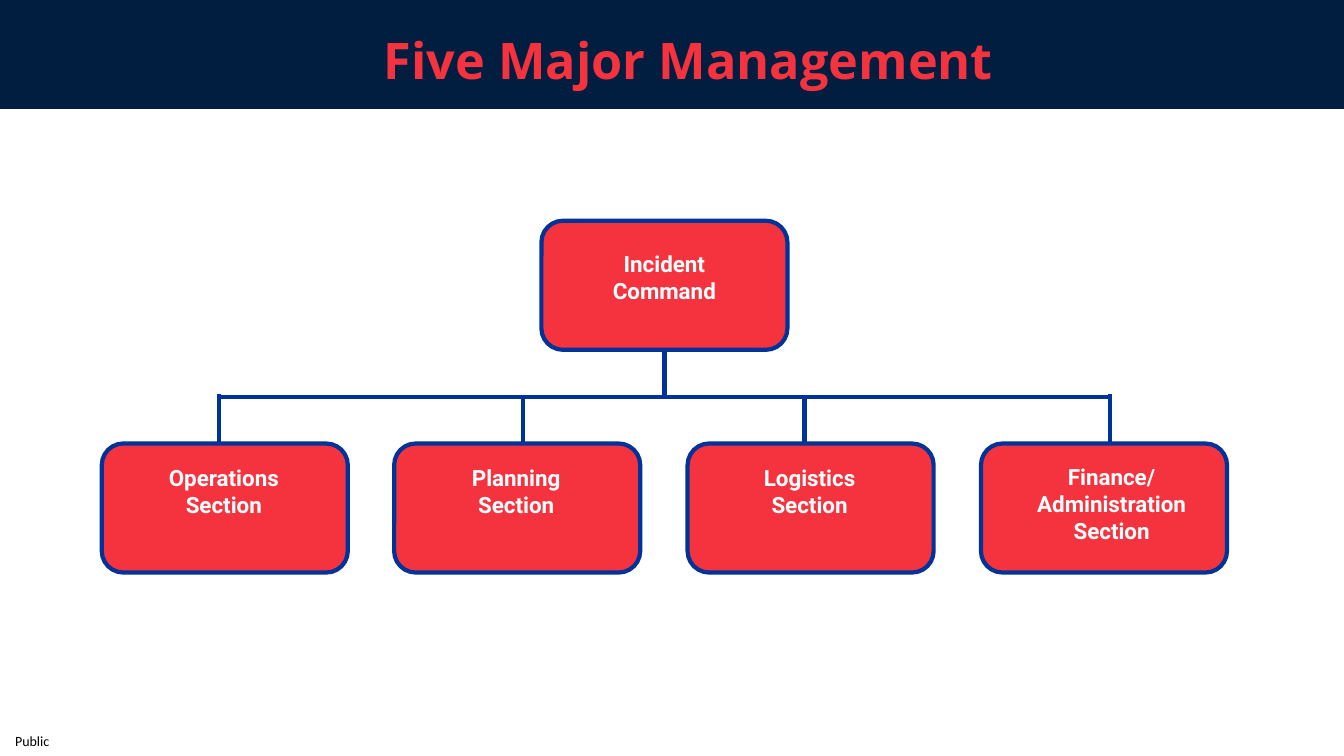
from dataclasses import dataclass

from lxml import etree
from pptx import Presentation
from pptx.dml.color import RGBColor
from pptx.enum.shapes import MSO_CONNECTOR, MSO_SHAPE
from pptx.enum.text import MSO_ANCHOR, MSO_AUTO_SIZE, PP_ALIGN
from pptx.oxml.ns import qn
from pptx.util import Emu, Pt

RECT, ROUND_RECT = MSO_SHAPE.RECTANGLE, MSO_SHAPE.ROUNDED_RECTANGLE
STRAIGHT = MSO_CONNECTOR.STRAIGHT
TOP, MIDDLE = MSO_ANCHOR.TOP, MSO_ANCHOR.MIDDLE
LEFT, CENTER = PP_ALIGN.LEFT, PP_ALIGN.CENTER
NO_FIT = MSO_AUTO_SIZE.NONE

EMU_PER_PX = 9144  # 100 px to the inch
NAVY, RED, BLUE, WHITE, BLACK = "011E41", "F5333F", "003399", "FFFFFF", "000000"
BOX_W, BOX_H = 244, 128
SECTION_TOP, BUS_Y, DROP = 440, 394, 58


@dataclass(frozen=True)
class Box:
    text: str
    left: int
    top: int
    label_dx: int
    label_dy: int
    label_w: int
    label_h: int


@dataclass(frozen=True)
class Line:
    x1: int
    y1: int
    x2: int
    y2: int


def section_left(i: int) -> int:
    """Spread four sections evenly between 101 and 973 px."""
    return 101 + 872 * i // 3


BOXES = [
    Box("Operations Section", section_left(0), SECTION_TOP, 20, 16, 202, 64),
    Box("Planning Section", section_left(1), SECTION_TOP, 28, 16, 186, 64),
    Box("Logistics Section", section_left(2), SECTION_TOP, 28, 16, 186, 64),
    Box("Finance/ Administration Section", section_left(3), SECTION_TOP, 19, 15, 221, 91),
    Box("Incident Command", 537, 219, 29, 24, 186, 64),
]
DROPS = [Line(x, y, x, y + DROP) for x, y in
         [(1101, 391), (798, BUS_Y), (659, BUS_Y - DROP), (519, BUS_Y), (217, 391)]]
BUS = Line(217, BUS_Y, 1101, BUS_Y)


def px(n: int) -> Emu:
    return Emu(n * EMU_PER_PX)


def color(hex_value: str) -> RGBColor:
    return RGBColor.from_string(hex_value)


def add_box(shapes, kind, left: int, top: int, width: int, height: int,
            fill: str, line: str = ""):
    sp = shapes.add_shape(kind, px(left), px(top), px(width), px(height))
    sp.shadow.inherit = False
    sp.fill.solid()
    sp.fill.fore_color.rgb = color(fill)
    if line:
        sp.line.color.rgb = color(line)
        sp.line.width = Pt(3)
    else:
        sp.line.fill.background()
    return sp


def add_line(shapes, line: Line) -> None:
    cxn = shapes.add_connector(STRAIGHT, px(line.x1), px(line.y1), px(line.x2), px(line.y2))
    cxn.line.color.rgb = color(BLUE)
    cxn.line.width = Pt(3)
    etree.SubElement(cxn.element.spPr, qn("a:effectLst"))


def write(sp, text: str, font: str, size: int, hex_value: str,
          bold: bool, align, anchor) -> None:
    tf = sp.text_frame
    tf.word_wrap = True
    tf.auto_size = NO_FIT
    tf.vertical_anchor = anchor
    p = tf.paragraphs[0]
    p.alignment = align
    r = p.add_run()
    r.text = text
    r.font.name = font
    r.font.size = Pt(size)
    r.font.bold = bold
    r.font.color.rgb = color(hex_value)


def add_org_box(shapes, box: Box) -> None:
    add_box(shapes, ROUND_RECT, box.left, box.top, BOX_W, BOX_H, RED, BLUE)
    label = add_box(shapes, RECT, box.left + box.label_dx, box.top + box.label_dy,
                    box.label_w, box.label_h, RED)
    write(label, box.text, "Roboto", 16, WHITE, True, CENTER, TOP)


def main() -> None:
    prs = Presentation()
    prs.slide_width, prs.slide_height = px(1333), px(750)
    s = prs.slides.add_slide(prs.slide_layouts[5])

    # Classification mark
    mark = s.shapes.add_textbox(px(0), px(721), px(64), px(29))
    tf = mark.text_frame
    tf.margin_left = px(15)
    tf.margin_top = tf.margin_right = tf.margin_bottom = 0
    write(mark, "Public", "Calibri", 10, BLACK, False, LEFT, MIDDLE)

    # Header band with the title in front of it
    add_box(s.shapes, RECT, -2, -1, 1335, 109, NAVY)
    title = s.shapes.title
    title.left, title.top, title.width, title.height = px(73), px(20), px(1220), px(78)
    write(title, "Five Major Management", "Open Sans", 36, RED, True, CENTER, MIDDLE)
    s.shapes.element.append(title.element)

    # Organisation chart
    chart = s.shapes.add_group_shape().shapes
    for drop in DROPS:
        add_line(chart, drop)
    for box in BOXES:
        add_org_box(chart, box)
    add_line(chart, BUS)

    prs.save("out.pptx")


if __name__ == "__main__":
    main()
